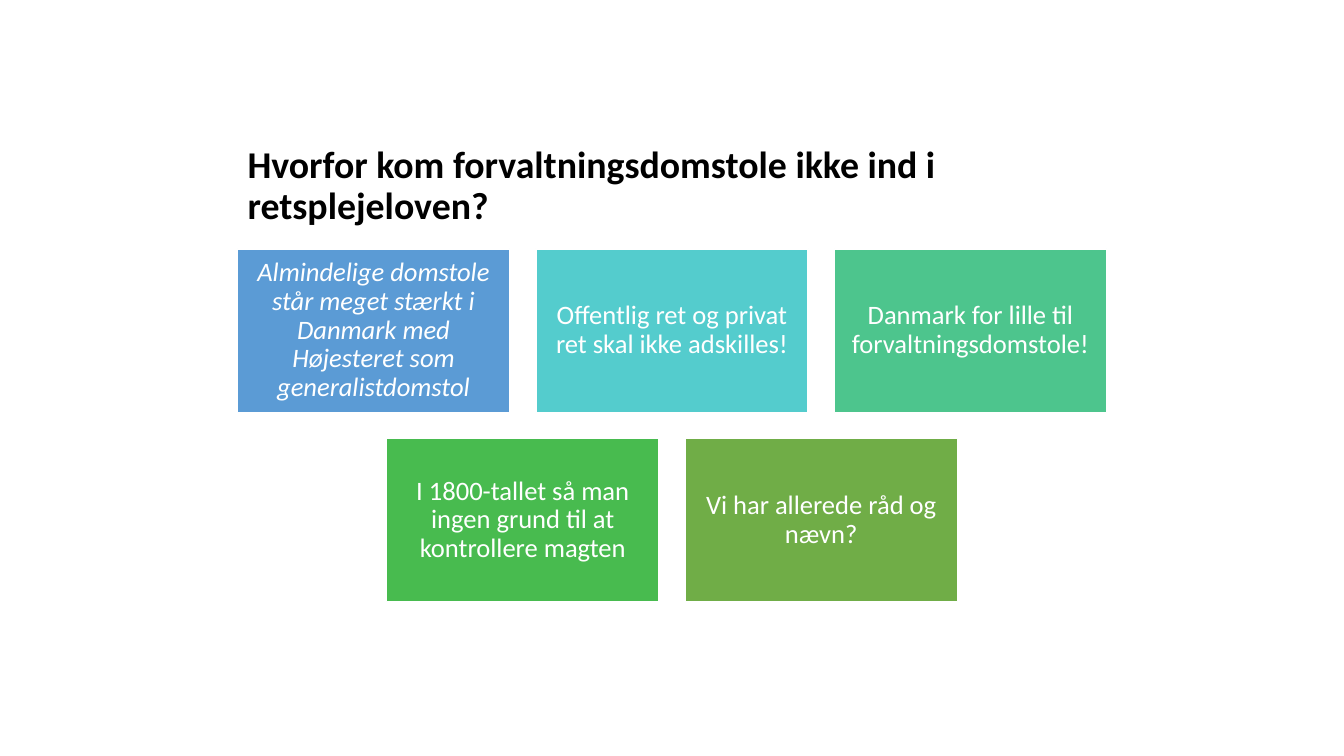
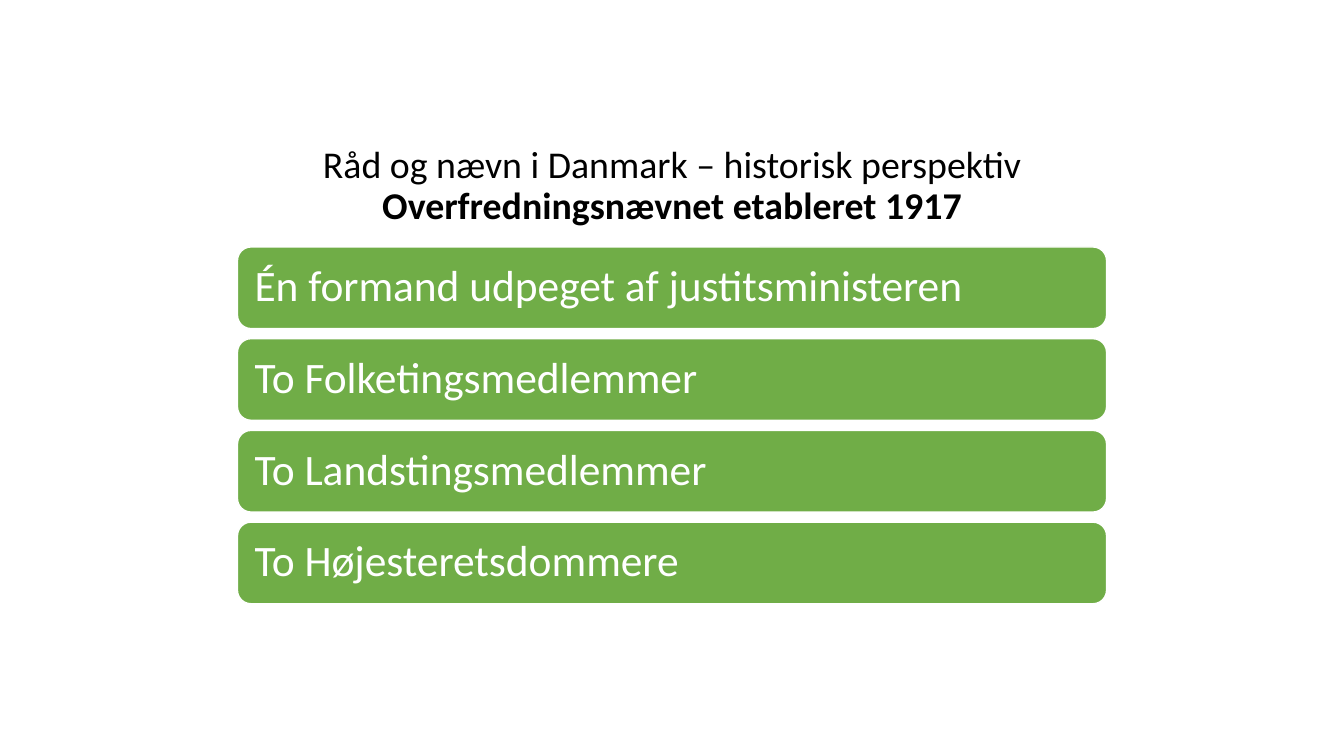
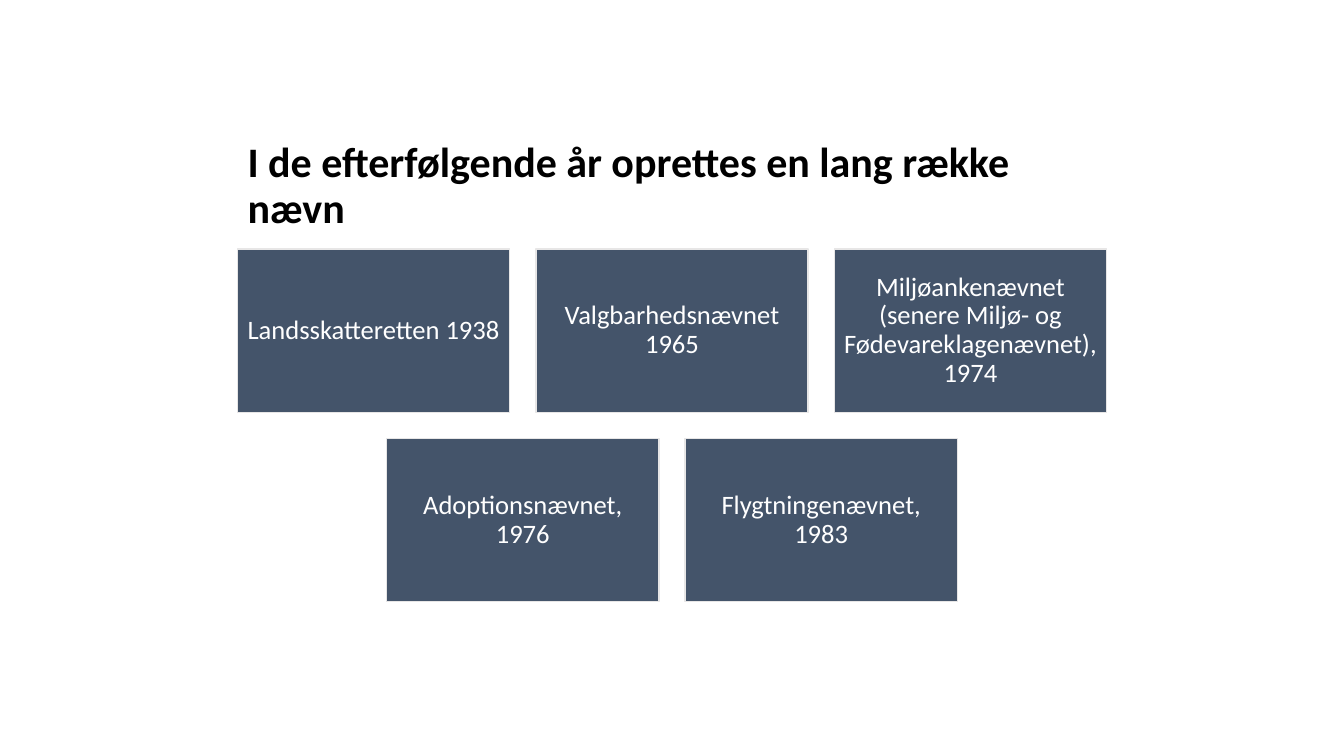
from copy import deepcopy
from dataclasses import dataclass

from pptx import Presentation
from pptx.dml.color import RGBColor
from pptx.enum.shapes import MSO_SHAPE as Preset
from pptx.enum.text import MSO_ANCHOR as Anchor, MSO_AUTO_SIZE as AutoSize, PP_ALIGN as Align
from pptx.oxml.ns import qn
from pptx.util import Inches, Pt


@dataclass(frozen=True)
class Theme:
    font: str = "Calibri"
    ink: str = "000000"
    white: str = "FFFFFF"
    green: str = "70AD47"
    slate: str = "44546A"
    mist: str = "E7E6E6"
    spectrum: tuple = ("5B9BD5", "54CCCD", "4DC58D", "48BB4F", "70AD47")
    title_size: int = 27
    large_title_size: int = 30
    tile_size: int = 19
    bar_size: int = 31
    line_spacing: float = 0.9
    line_width: int = 1


theme = Theme()

PAGE_W, PAGE_H = 13.33, 7.5
CONTENT_W = 8.62
LEFT = (PAGE_W - CONTENT_W) / 2
TITLE_TOP, TITLE_H = 1.39, 0.93
COLUMNS, GAP = 3, 0.26
TILE_W = (CONTENT_W - (COLUMNS - 1) * GAP) / COLUMNS
TILE_TOP, TILE_H = 2.47, 1.62
BAR_TOP, BAR_H, BAR_PITCH = 2.45, 0.81, 0.91


def format_text(frame, size, color, align):
    frame.word_wrap = True
    frame.auto_size = AutoSize.NONE
    frame.vertical_anchor = Anchor.MIDDLE
    para = frame.paragraphs[0]
    para.alignment = align
    para.line_spacing = theme.line_spacing
    for span in para.runs:
        span.font.name = theme.font
        span.font.size = Pt(size)
        span.font.color.rgb = RGBColor.from_string(color)
    for line_break in para._p.findall(qn("a:br")):
        line_break.insert(0, deepcopy(para.runs[0]._r.find(qn("a:rPr"))))
    return para


def add_box(page, preset, place, text, fill, line, size, align, inset):
    box = page.shapes.add_shape(preset, *map(Inches, place))
    box.shadow.inherit = False
    box.fill.solid()
    box.fill.fore_color.rgb = RGBColor.from_string(fill)
    box.line.color.rgb = RGBColor.from_string(line)
    box.line.width = Pt(theme.line_width)
    frame = box.text_frame
    frame.margin_left = frame.margin_right = Inches(inset)
    frame.margin_top = frame.margin_bottom = Inches(inset)
    frame.text = text
    return format_text(frame, size, theme.white, align)


deck = Presentation()
deck.slide_width, deck.slide_height = Inches(PAGE_W), Inches(PAGE_H)
title_only = deck.slide_layouts.get_by_name("Title Only")

titles = [
    ("Hvorfor kom forvaltningsdomstole ikke ind i retsplejeloven?", theme.title_size, Align.LEFT),
    ("Råd og nævn i Danmark – historisk perspektiv\vOverfredningsnævnet etableret 1917",
     theme.title_size, Align.CENTER),
    ("I de efterfølgende år oprettes en lang række nævn", theme.large_title_size, Align.LEFT),
]
pages = []
for text, size, align in titles:
    page = deck.slides.add_slide(title_only)
    title = page.shapes.title
    title.left, title.top = Inches(LEFT), Inches(TITLE_TOP)
    title.width, title.height = Inches(CONTENT_W), Inches(TITLE_H)
    title.text_frame.text = text
    para = format_text(title.text_frame, size, theme.ink, align)
    para.runs[-1].font.bold = True
    pages.append(page)

reasons_page, members_page, boards_page = pages

reasons = [
    "Almindelige domstole står meget stærkt i Danmark med Højesteret som generalistdomstol",
    "Offentlig ret og privat ret skal ikke adskilles!",
    "Danmark for lille til forvaltningsdomstole!",
    "I 1800-tallet så man ingen grund til at kontrollere magten",
    "Vi har allerede råd og nævn?",
]
boards = [
    "Landsskatteretten 1938",
    "Valgbarhedsnævnet 1965",
    "Miljøankenævnet (senere Miljø- og Fødevareklagenævnet), 1974",
    "Adoptionsnævnet, 1976",
    "Flygtningenævnet, 1983",
]
tile_pages = [
    (reasons_page, reasons, theme.spectrum, theme.white),
    (boards_page, boards, [theme.slate] * len(boards), theme.mist),
]
for page, texts, fills, line in tile_pages:
    for index, (text, fill) in enumerate(zip(texts, fills)):
        row, column = divmod(index, COLUMNS)
        in_row = min(COLUMNS, len(texts) - row * COLUMNS)
        indent = (COLUMNS - in_row) * (TILE_W + GAP) / 2
        place = (LEFT + indent + column * (TILE_W + GAP),
                 TILE_TOP + row * (TILE_H + GAP), TILE_W, TILE_H)
        para = add_box(page, Preset.RECTANGLE, place, text, fill, line,
                       theme.tile_size, Align.CENTER, 0.08)
        if page is reasons_page and index == 0:
            para.runs[0].font.italic = True

members = [
    "Én formand udpeget af justitsministeren",
    "To Folketingsmedlemmer",
    "To Landstingsmedlemmer",
    "To Højesteretsdommere",
]
for row, text in enumerate(members):
    place = (LEFT, BAR_TOP + row * BAR_PITCH, CONTENT_W, BAR_H)
    add_box(members_page, Preset.ROUNDED_RECTANGLE, place, text, theme.green, theme.white,
            theme.bar_size, Align.LEFT, 0.13)

deck.save("out.pptx")
